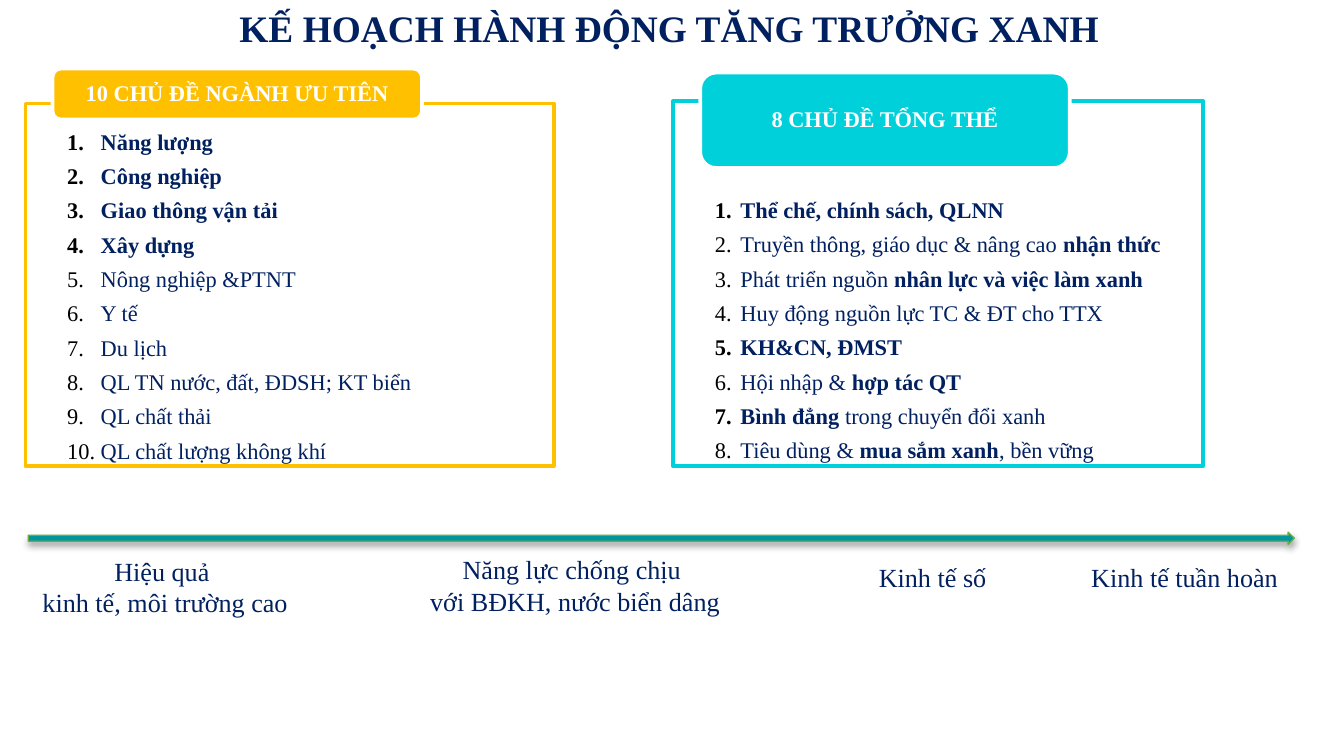
from dataclasses import dataclass

from lxml import etree
from pptx import Presentation
from pptx import util as u
from pptx.dml.color import RGBColor
from pptx.enum import shapes, text
from pptx.oxml.ns import qn

FONT = "Times New Roman"
COLORS = {
    "navy": "002060", "white": "FFFFFF", "black": "000000", "amber": "FFC000",
    "cyan": "00D0DA", "teal": "00969E", "green": "6DAC43",
}


@dataclass
class Box:
    left: float
    top: float
    width: float
    height: float

    def lengths(self):
        return [u.Inches(n) for n in (self.left, self.top, self.width, self.height)]


@dataclass
class Panel:
    frame: Box
    badge: Box
    color: str
    heading: str
    top_inset: float
    indent: float
    topics: list[str]


@dataclass
class Label:
    box: Box
    lines: list[str]


# Words between asterisks are bold.
PANELS = [
    Panel(Box(0.19, 0.77, 3.93, 2.7), Box(0.39, 0.51, 2.75, 0.38), "amber",
          "10 CHỦ ĐỀ NGÀNH ƯU TIÊN", 0.18, 0.25,
          ["*Năng lượng*", "*Công nghiệp*", "*Giao thông vận tải*", "*Xây dựng*",
           "Nông nghiệp &PTNT", "Y tế", "Du lịch", "QL TN nước, đất, ĐDSH; KT biển",
           "QL chất thải", "QL chất lượng không khí"]),
    Panel(Box(5.01, 0.75, 3.94, 2.72), Box(5.21, 0.54, 2.75, 0.71), "cyan",
          "8 CHỦ ĐỀ TỔNG THỂ", 0.71, 0.19,
          ["*Thể chế, chính sách, QLNN*",
           "Truyền thông, giáo dục & nâng cao *nhận thức*",
           "Phát triển nguồn *nhân lực và việc làm xanh*",
           "Huy động nguồn lực TC & ĐT cho TTX",
           "*KH&CN, ĐMST*",
           "Hội nhập & *hợp tác QT*",
           "*Bình đẳng *trong chuyển đổi xanh",
           "Tiêu dùng & *mua sắm xanh*, bền vững"]),
]

LABELS = [
    Label(Box(0, 4.08, 2.46, 0.57), ["Hiệu quả ", "kinh tế, môi trường cao"]),
    Label(Box(3.05, 4.07, 2.46, 0.57), ["Năng lực chống chịu ", "với BĐKH, nước biển dâng"]),
    Label(Box(6.41, 4.13, 1.06, 0.34), ["Kinh tế số"]),
    Label(Box(8.01, 4.13, 1.61, 0.34), ["Kinh tế tuần hoàn"]),
]


def rgb(name: str) -> RGBColor:
    return RGBColor.from_string(COLORS[name])


def set_format(target, **values) -> None:
    for name, value in values.items():
        setattr(target, name, value)


def set_insets(frame, left: float, top: float, right: float, bottom: float) -> None:
    set_format(frame, margin_left=u.Inches(left), margin_top=u.Inches(top),
               margin_right=u.Inches(right), margin_bottom=u.Inches(bottom))


def add_panel_shape(slide, kind, box: Box, fill: str, line: str, line_width: float):
    shape = slide.shapes.add_shape(kind, *box.lengths())
    shape.shadow.inherit = False
    shape.fill.solid()
    shape.fill.fore_color.rgb = rgb(fill)
    shape.line.color.rgb = rgb(line)
    shape.line.width = u.Pt(line_width)
    return shape


def write_lines(frame, lines: list[str], size: float, color: str,
                align=text.PP_ALIGN.CENTER) -> None:
    """Write one paragraph per line, with bold between asterisks."""
    for index, line in enumerate(lines):
        paragraph = frame.paragraphs[0] if index == 0 else frame.add_paragraph()
        paragraph.alignment = align
        for position, words in enumerate(line.split("*")):
            if words:
                run = paragraph.add_run()
                run.text = words
                set_format(run.font, name=FONT, size=u.Pt(size), bold=position % 2 == 1)
                run.font.color.rgb = rgb(color)


def number_paragraph(paragraph, indent: float) -> None:
    paragraph.space_after = u.Pt(4)
    properties = paragraph._p.get_or_add_pPr()
    properties.set("marL", str(u.Inches(indent)))
    properties.set("indent", str(-u.Inches(indent)))
    bullet_color = etree.SubElement(properties, qn("a:buClr"))
    etree.SubElement(bullet_color, qn("a:srgbClr"), val=COLORS["black"])
    etree.SubElement(properties, qn("a:buFont"), typeface=FONT)
    etree.SubElement(properties, qn("a:buAutoNum"), type="arabicPeriod")


def add_panel(slide, panel: Panel) -> None:
    frame = add_panel_shape(slide, shapes.MSO_SHAPE.RECTANGLE, panel.frame,
                            "white", panel.color, 2).text_frame
    set_format(frame, word_wrap=True, vertical_anchor=text.MSO_ANCHOR.TOP)
    set_insets(frame, 0.31, panel.top_inset, 0.2, 0.09)
    write_lines(frame, panel.topics, 12, "navy", text.PP_ALIGN.LEFT)
    for paragraph in frame.paragraphs:
        number_paragraph(paragraph, panel.indent)

    badge = add_panel_shape(slide, shapes.MSO_SHAPE.ROUNDED_RECTANGLE, panel.badge,
                            panel.color, "white", 2).text_frame
    set_format(badge, word_wrap=True, vertical_anchor=text.MSO_ANCHOR.MIDDLE)
    set_insets(badge, 0.1, 0, 0.1, 0)
    write_lines(badge, [f"*{panel.heading}*"], 12, "white")
    badge.paragraphs[0].line_spacing = 0.9


def add_label(slide, label: Label) -> None:
    frame = slide.shapes.add_textbox(*label.box.lengths()).text_frame
    frame.word_wrap = True
    write_lines(frame, label.lines, 14, "navy")


def add_title(slide) -> None:
    box = Box(0, 0.01, 10.04, 0.36)
    frame = slide.shapes.add_textbox(*box.lengths()).text_frame
    set_format(frame, word_wrap=True, vertical_anchor=text.MSO_ANCHOR.BOTTOM)
    set_insets(frame, 0, 0, 0.08, 0)
    write_lines(frame, ["*KẾ HOẠCH HÀNH ĐỘNG TĂNG TRƯỞNG XANH*"], 20, "navy")


def add_timeline_arrow(slide) -> None:
    arrow = add_panel_shape(slide, shapes.MSO_SHAPE.RIGHT_ARROW,
                            Box(0.21, 3.96, 9.42, 0.09), "teal", "green", 0.75)
    effects = arrow._element.spPr.find(qn("a:effectLst"))
    shadow = etree.SubElement(effects, qn("a:outerShdw"), blurRad=str(u.Pt(3.1)),
                              dist=str(u.Pt(1.8)), dir="5400000", rotWithShape="0")
    color = etree.SubElement(shadow, qn("a:srgbClr"), val=COLORS["black"])
    etree.SubElement(color, qn("a:alpha"), val="35000")


def main() -> None:
    presentation = Presentation()
    set_format(presentation, slide_width=u.Inches(10),
               slide_height=u.Inches(10 * 9 / 16))
    slide = presentation.slides.add_slide(presentation.slide_layouts[6])
    add_title(slide)
    for panel in PANELS:
        add_panel(slide, panel)
    add_timeline_arrow(slide)
    for label in LABELS:
        add_label(slide, label)
    presentation.save("out.pptx")


if __name__ == "__main__":
    main()
